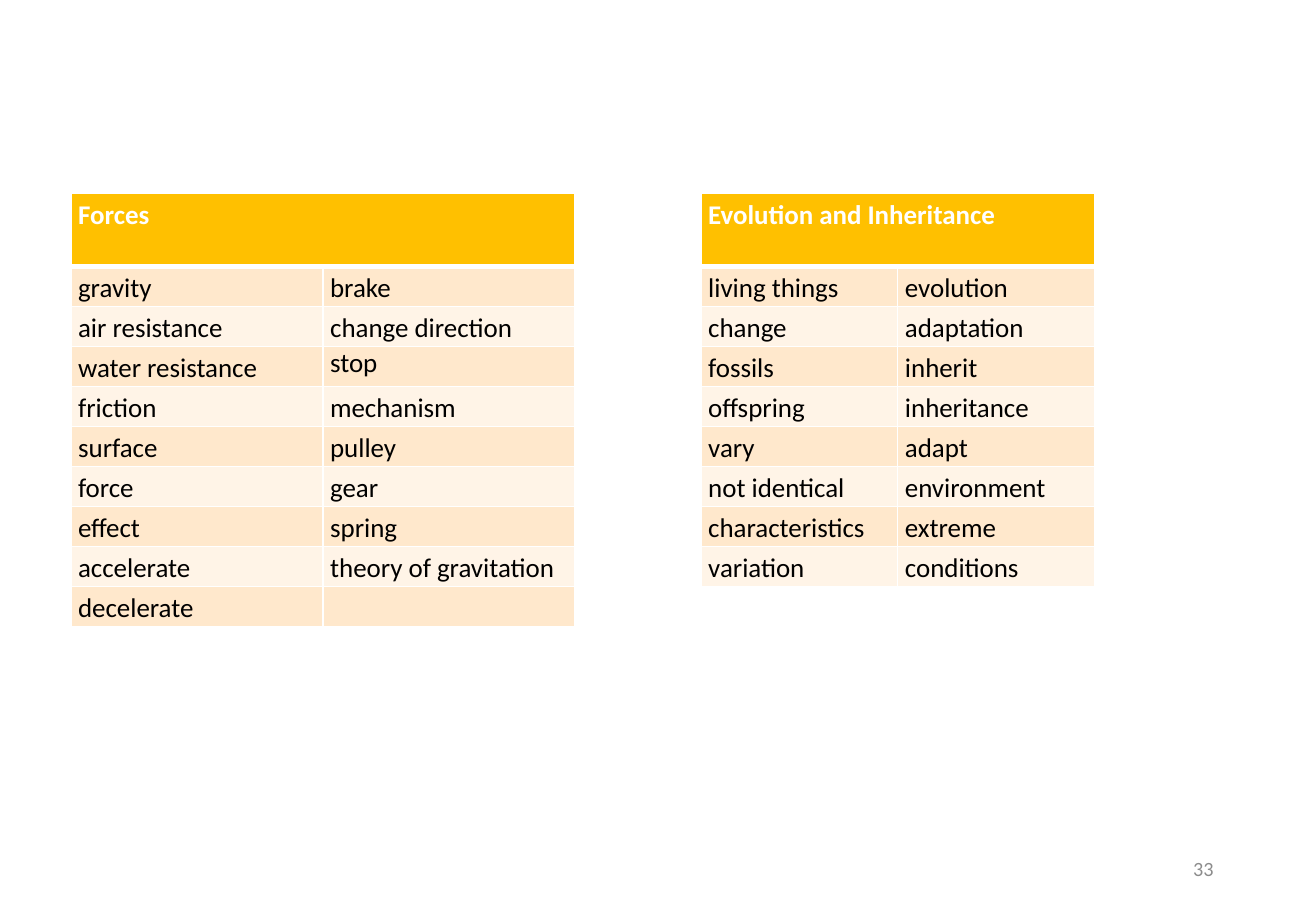
import pptx
import pptx.dml.color
import pptx.enum.text
import pptx.oxml
import pptx.oxml.ns
import pptx.util

Pt = pptx.util.Pt
ALIGN = pptx.enum.text.PP_ALIGN
ANCHOR = pptx.enum.text.MSO_ANCHOR

TABLES = [
    ("Forces", 42, 149.4, [
        ("gravity", "brake"),
        ("air resistance", "change direction"),
        ("water resistance", "stop"),
        ("friction", "mechanism"),
        ("surface", "pulley"),
        ("force", "gear"),
        ("effect", "spring"),
        ("accelerate", "theory of gravitation"),
        ("decelerate", ""),
    ]),
    ("Evolution and Inheritance", 415.5, 116.6, [
        ("living things", "evolution"),
        ("change", "adaptation"),
        ("fossils", "inherit"),
        ("offspring", "inheritance"),
        ("vary", "adapt"),
        ("not identical", "environment"),
        ("characteristics", "extreme"),
        ("variation", "conditions"),
    ]),
]
PAGE = "33"
TOP, HEAD_H, ROW_H = 114.8, 43.2, 23.75
HEAD, BANDS = "FFC000", ("FFE8CC", "FFF4E7")
SINGLE_SPACED = {"stop"}
MARGINS = {"margin_left": Pt(4.3), "margin_right": Pt(4.3), "margin_top": 0, "margin_bottom": 0}


def rgb(color):
    return pptx.dml.color.RGBColor.from_string(color)


def write(p, text, color, size, bold=False):
    r = p.add_run()
    r.text = text
    r.font.color.rgb = rgb(color)
    for name, value in {"name": "Calibri", "size": Pt(size), "bold": bold}.items():
        setattr(r.font, name, value)


def add_borders(cell, widths):
    tcPr = cell._tc.get_or_add_tcPr()
    for side, width in widths.items():
        tcPr.append(pptx.oxml.parse_xml(
            f'<a:ln{side} {pptx.oxml.ns.nsdecls("a")} w="{Pt(width)}"><a:solidFill>'
            f'<a:srgbClr val="FFFFFF"/></a:solidFill></a:ln{side}>'))


def fill_cell(cell, row, text):
    add_borders(cell, {"L": 1, "R": 1, "T": 3 if row == 1 else 1, "B": 3 if row == 0 else 1})
    cell.fill.solid()
    cell.fill.fore_color.rgb = rgb(BANDS[(row - 1) % 2] if row else HEAD)
    for name, value in MARGINS.items():
        setattr(cell, name, value)
    if text:
        p = cell.text_frame.paragraphs[0]
        p.line_spacing = 1.0 if text in SINGLE_SPACED else 1.15
        write(p, text, "000000" if row else "FFFFFF", 16, row == 0)


def add_word_table(s, title, left, col_w, words):
    rows = [(title, "")] + words
    height = HEAD_H + ROW_H * len(words)
    table = s.shapes.add_table(len(rows), 2, Pt(left), Pt(TOP), Pt(2 * col_w), Pt(height)).table
    for col in table.columns:
        col.width = Pt(col_w)
    for i, texts in enumerate(rows):
        table.rows[i].height = Pt(ROW_H if i else HEAD_H)
        for j, text in enumerate(texts):
            fill_cell(table.cell(i, j), i, text)
    table.cell(0, 0).merge(table.cell(0, 1))


prs = pptx.Presentation()
prs.slide_width, prs.slide_height = Pt(780), Pt(540)
s = prs.slides.add_slide(prs.slide_layouts[6])

tf = s.shapes.add_textbox(Pt(550.8), Pt(500.4), Pt(175.7), Pt(28.8)).text_frame
for name, value in {"word_wrap": True, "vertical_anchor": ANCHOR.MIDDLE}.items():
    setattr(tf, name, value)
tf.paragraphs[0].alignment = ALIGN.RIGHT
write(tf.paragraphs[0], PAGE, "8C8C8C", 12)

for word_table in TABLES:
    add_word_table(s, *word_table)

prs.save("out.pptx")
